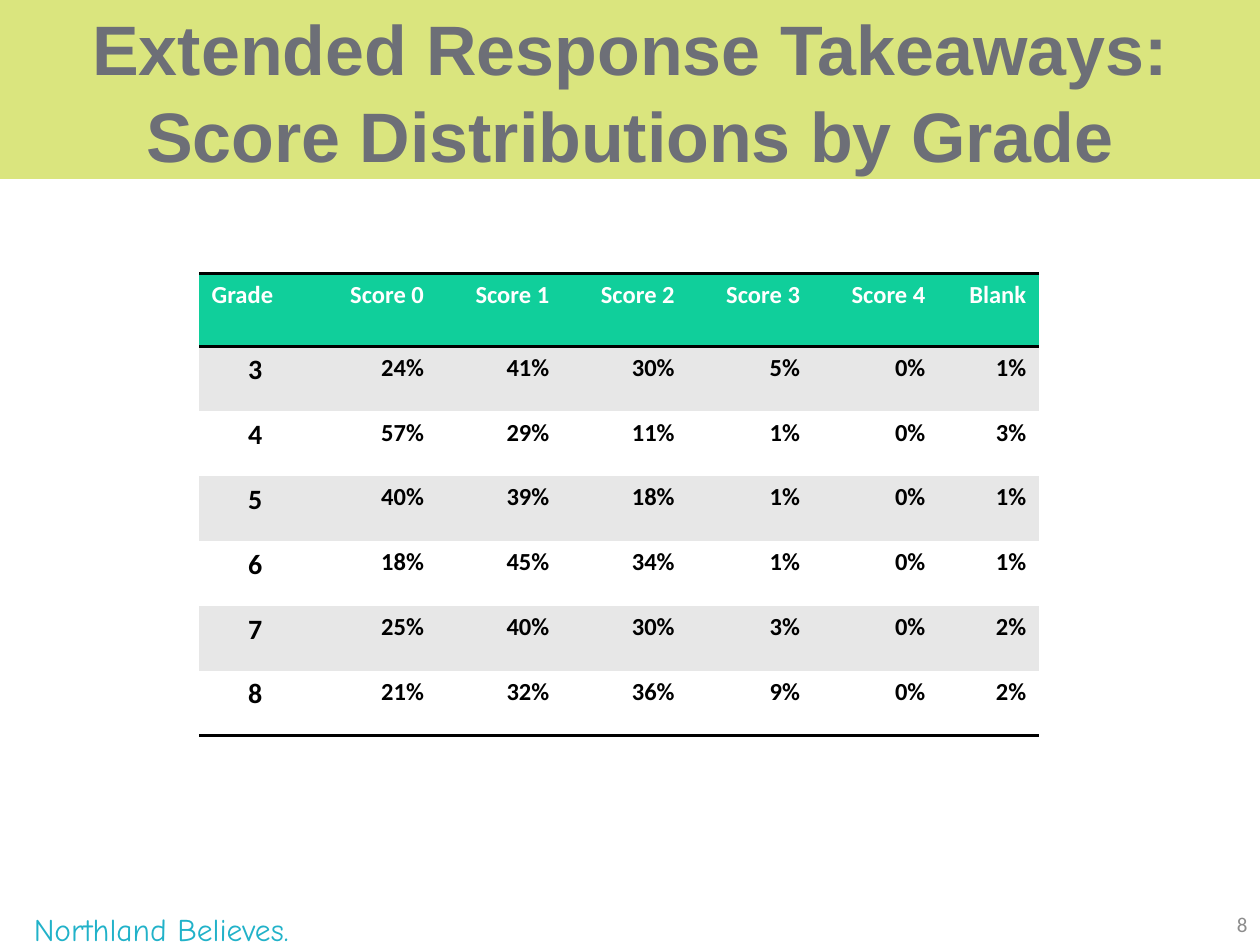
from lxml import etree
from pptx import Presentation
from pptx import util as u
from pptx.dml.color import RGBColor
from pptx.enum import shapes, text
from pptx.oxml import ns

LEFT, MID, RIGHT = text.PP_ALIGN.LEFT, text.PP_ALIGN.CENTER, text.PP_ALIGN.RIGHT
HEAD = ["Grade", "Score 0", "Score 1", "Score 2", "Score 3", "Score 4", "Blank"]
SHARES = {
    3: [24, 41, 30, 5, 0, 1],
    4: [57, 29, 11, 1, 0, 3],
    5: [40, 39, 18, 1, 0, 1],
    6: [18, 45, 34, 1, 0, 1],
    7: [25, 40, 30, 3, 0, 2],
    8: [21, 32, 36, 9, 0, 2],
}


def tint(code):
    return RGBColor.from_string(code)


def write(frame, words, size=14, font="Calibri", color="000000", bold=False,
          align=LEFT, space=None):
    para = frame.paragraphs[0]
    para.text = words
    para.alignment = align
    para.line_spacing = space
    for run in para.runs:
        run.font.size = u.Pt(size)
        run.font.name = font
        run.font.bold = bold
        run.font.color.rgb = tint(color)


def rule(cell, sides):
    """Draw black lines on the named sides (T, B) and clear the others."""
    props = cell._tc.get_or_add_tcPr()
    for side in "LRTB":
        line = etree.SubElement(props, ns.qn("a:ln" + side))
        if side in sides:
            line.set("w", str(u.Pt(2)))
            fill = etree.SubElement(line, ns.qn("a:solidFill"))
            etree.SubElement(fill, ns.qn("a:srgbClr"), val="000000")
        else:
            etree.SubElement(line, ns.qn("a:noFill"))


class Deck:
    green, gray, white = "10CF9B", "E7E7E7", "FFFFFF"
    lime, slate, teal, pale = "DAE57E", "6D6F77", "21B2C9", "8C8C8C"

    def __init__(self):
        self.file = Presentation()
        self.file.slide_width = u.Inches(10)
        self.file.slide_height = u.Inches(7.5)
        self.slide = self.file.slides.add_slide(self.file.slide_layouts[6])

    def band(self, box, color):
        form = self.slide.shapes.add_shape(
            shapes.MSO_SHAPE.RECTANGLE, *map(u.Inches, box))
        form.shadow.inherit = False
        form.fill.solid()
        form.fill.fore_color.rgb = tint(color)
        form.line.fill.background()

    def label(self, box, words, anchor=text.MSO_ANCHOR.MIDDLE, **style):
        frame = self.slide.shapes.add_textbox(*map(u.Inches, box)).text_frame
        frame.word_wrap = True
        frame.vertical_anchor = anchor
        write(frame, words, **style)

    def table(self, box, rows, widths, heights):
        grid = self.slide.shapes.add_table(
            len(rows), len(widths), *map(u.Inches, box)).table
        grid.first_row = grid.horz_banding = False
        for col, width in zip(grid.columns, widths):
            col.width = u.Inches(width)
        for row, height in zip(grid.rows, heights):
            row.height = u.Inches(height)
        for r, row in enumerate(rows):
            head, last = r == 0, r == len(rows) - 1
            back = self.green if head else self.gray if r % 2 else self.white
            # Neighbouring cells share the line under the header.
            sides = "TB" if head else "T" if r == 1 else "B" if last else ""
            for c, words in enumerate(row):
                cell = grid.cell(r, c)
                rule(cell, sides)
                cell.fill.solid()
                cell.fill.fore_color.rgb = tint(back)
                write(cell.text_frame, words, bold=True,
                      size=14 if head or c else 16,
                      color=self.white if head else "000000",
                      align=RIGHT if c else LEFT if head else MID)


def main():
    deck = Deck()
    top = (0, 0, 10, 1.42)
    deck.band(top, deck.lime)
    deck.label(top, "Extended Response Takeaways:\vScore Distributions by Grade",
               size=40, font="Arial", color=deck.slate, bold=True, align=MID,
               space=1.04)
    deck.label((7.67, 7.17, 2.33, 0.33), "8", size=12, color=deck.pale, align=RIGHT)
    deck.label((0.17, 7.17, 3.17, 0.33), "Northland Believes.",
               anchor=text.MSO_ANCHOR.TOP, size=18, font="Comic Neue", color=deck.teal)
    rows = [HEAD] + [[str(grade)] + [f"{share}%" for share in shares]
                     for grade, shares in SHARES.items()]
    deck.table((1.58, 2.17, 6.67, 3.67), rows,
               [0.89] + [0.995] * 5 + [0.8], [0.58] + [0.515] * 6)
    deck.file.save("out.pptx")


if __name__ == "__main__":
    main()
